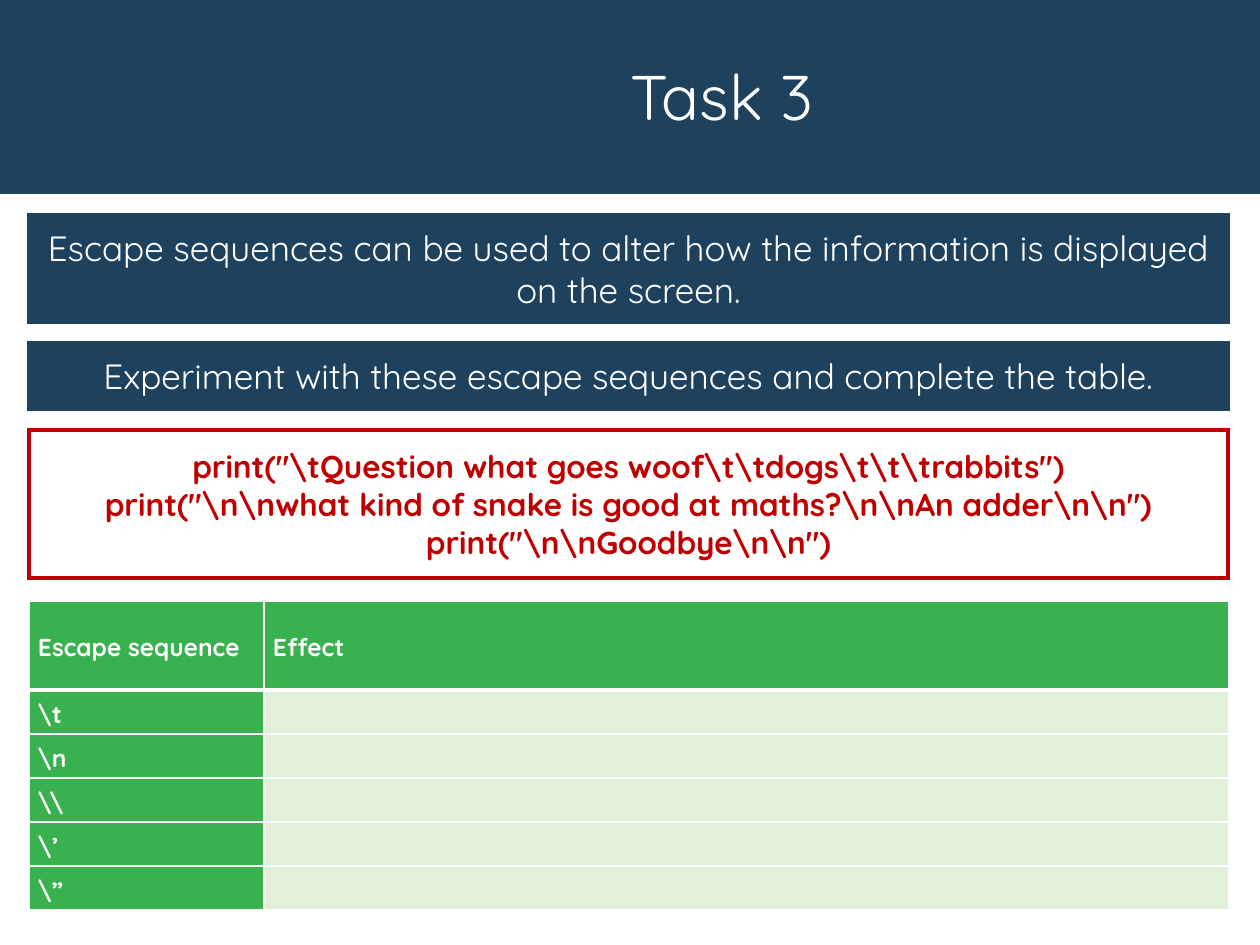
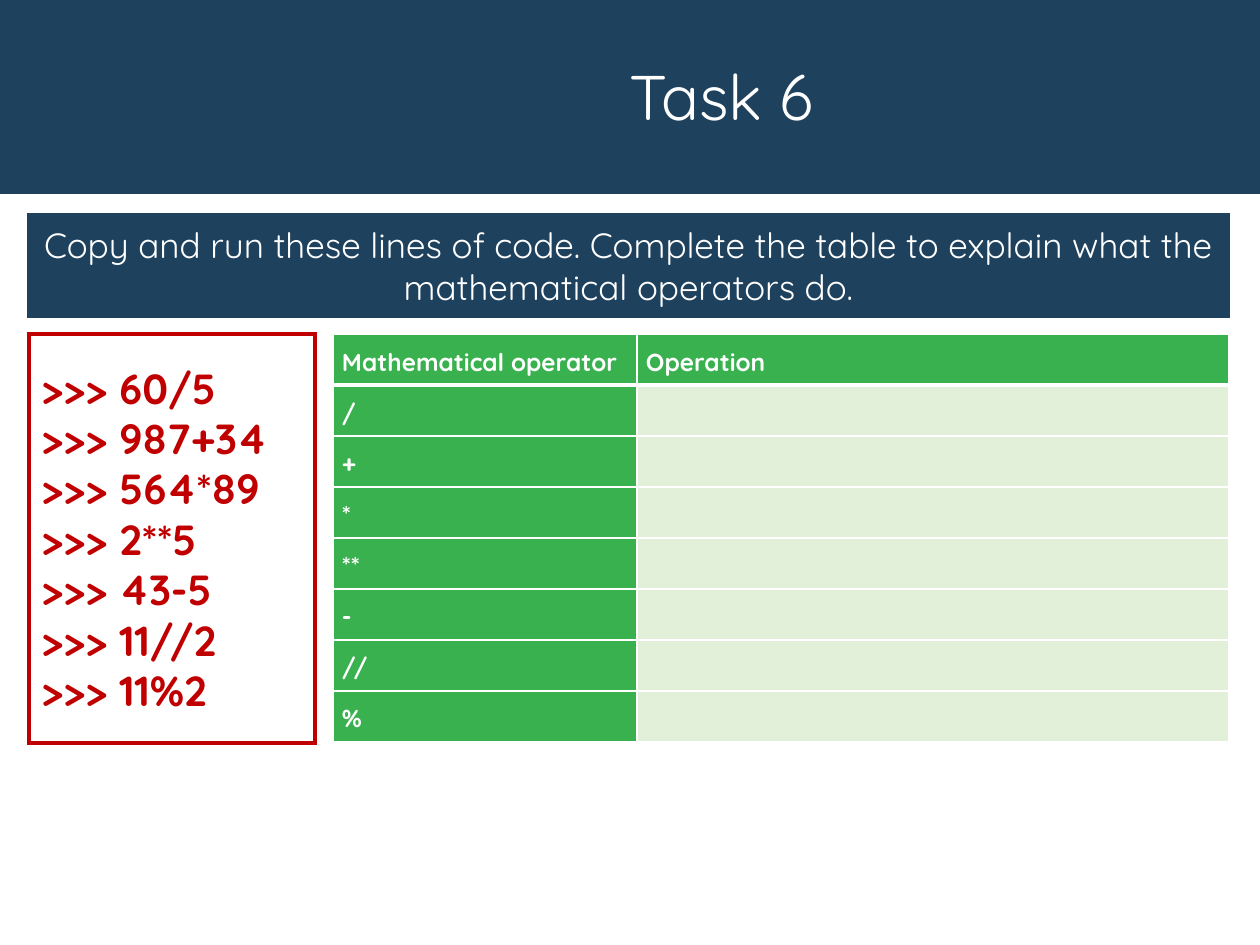
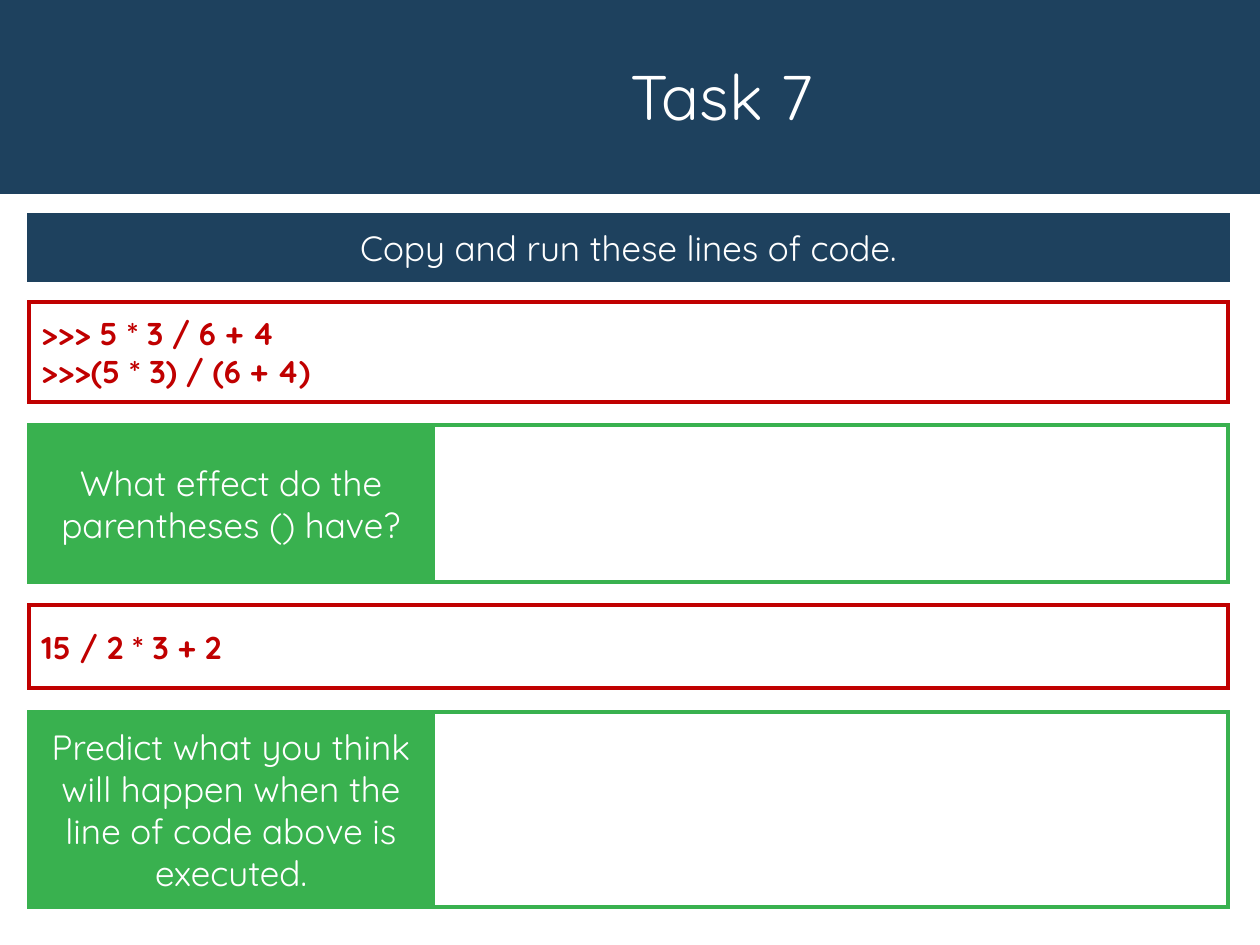
import pptx
import pptx.dml.color
import pptx.enum.shapes
import pptx.enum.text
import pptx.oxml
import pptx.oxml.ns
import pptx.util

EMU_PER_PX = 914400 / 126
FONT = "Quicksand"
NAVY, RED, GREEN, PALE_GREEN, WHITE = "1E415E", "C00000", "39B14F", "E2F0D9", "FFFFFF"
LEFT, WIDTH, TOP = 29, 1199, 215
LABEL_WIDTH = 404
CENTER = pptx.enum.text.PP_ALIGN.CENTER
ALIGN_LEFT = pptx.enum.text.PP_ALIGN.LEFT
MIDDLE = pptx.enum.text.MSO_ANCHOR.MIDDLE
NAMESPACE = pptx.oxml.ns.nsdecls("a")


def px(length):
    return pptx.util.Emu(round(length * EMU_PER_PX))


def rgb(color):
    return pptx.dml.color.RGBColor.from_string(color)


def write(frame, lines, size, color, bold=False, align=CENTER, spacing=None):
    """Fill a text frame, one paragraph a line, in a single style."""
    frame.text = "\n".join(lines)
    for para in frame.paragraphs:
        para.alignment = align
        if spacing:
            para.line_spacing = spacing
        for span in para.runs:
            span.font.name = FONT
            span.font.size = pptx.util.Pt(size)
            span.font.bold = bold
            span.font.color.rgb = rgb(color)


def add_box(page, left, top, width, height, fill=None, line=None):
    box = page.shapes.add_shape(pptx.enum.shapes.MSO_SHAPE.RECTANGLE,
                                px(left), px(top), px(width), px(height))
    box.shadow.inherit = False
    if fill:
        box.fill.solid()
        box.fill.fore_color.rgb = rgb(fill)
    else:
        box.fill.background()
    if line:
        box.line.color.rgb = rgb(line)
        box.line.width = pptx.util.Pt(2.25)
        # Square corners
        outline = box.element.spPr.find(pptx.oxml.ns.qn("a:ln"))
        outline.append(pptx.oxml.parse_xml(f'<a:miter {NAMESPACE} lim="800000"/>'))
    else:
        box.line.fill.background()
    box.text_frame.word_wrap = True
    box.text_frame.vertical_anchor = MIDDLE
    return box


def add_banner(page, text, top, height, color=NAVY, width=WIDTH):
    box = add_box(page, LEFT, top, width, height, color, color)
    write(box.text_frame, [text], 20, WHITE)


def add_code(page, lines, top, height, width=WIDTH, size=18, align=ALIGN_LEFT):
    box = add_box(page, LEFT, top, width, height, line=RED)
    write(box.text_frame, lines, size, RED, bold=True, align=align)


def add_question(page, text, top, height):
    """A green prompt with an empty answer box beside it."""
    add_box(page, LEFT + LABEL_WIDTH, top, WIDTH - LABEL_WIDTH, height, line=GREEN)
    add_banner(page, text, top, height, GREEN, LABEL_WIDTH)


def set_border(cell, side, points):
    cell._tc.get_or_add_tcPr().append(pptx.oxml.parse_xml(
        f'<a:ln{side} {NAMESPACE} w="{points * 12700}"><a:solidFill>'
        f'<a:srgbClr val="{WHITE}"/></a:solidFill></a:ln{side}>'))


def add_answer_table(page, headings, keys, left, top, column_widths, row_heights):
    """A heading row, then one key a row with an empty cell to fill in."""
    rows = [headings] + [(key, "") for key in keys]
    table = page.shapes.add_table(len(rows), 2, px(left), px(top),
                                  px(sum(column_widths)), px(sum(row_heights))).table
    table.horz_banding = False
    for column, width in zip(table.columns, column_widths):
        column.width = px(width)
    for row, height in zip(table.rows, row_heights):
        row.height = px(height)
    for i, texts in enumerate(rows):
        for j, text in enumerate(texts):
            cell = table.cell(i, j)
            cell.margin_left = cell.margin_right = px(9)
            cell.margin_top = cell.margin_bottom = 0
            cell.vertical_anchor = MIDDLE
            borders = {"L": 1, "R": 1, "T": 3 if i == 1 else 1, "B": 3 if i == 0 else 1}
            for side, points in borders.items():
                set_border(cell, side, points)
            cell.fill.solid()
            cell.fill.fore_color.rgb = rgb(GREEN if text else PALE_GREEN)
            if text:
                write(cell.text_frame, [text], 14, WHITE, True, ALIGN_LEFT, 1.15)


def add_page(deck, title):
    """A page with the title on a navy band."""
    page = deck.slides.add_slide(deck.slide_layouts[5])
    heading = page.shapes.title
    heading.left, heading.top, heading.width, heading.height = map(px, (183, 30, 1077, 140))
    heading.text_frame.vertical_anchor = MIDDLE
    write(heading.text_frame, [title], 36, WHITE, spacing=0.9)
    band = add_box(page, 0, 0, 1260, 194, NAVY)
    heading.element.addprevious(band.element)
    return page


def add_escape_page(deck):
    page = add_page(deck, "Task 3")
    add_banner(page, "Escape sequences can be used to alter how the information "
                     "is displayed on the screen.", TOP, 107)
    add_banner(page, "Experiment with these escape sequences and complete the table.", 343, 66)
    add_code(page, [r'print("\tQuestion what goes woof\t\tdogs\t\t\trabbits")',
                    r'print("\n\nwhat kind of snake is good at maths?\n\nAn adder\n\n")',
                    r'print("\n\nGoodbye\n\n")'], 430, 148, align=CENTER)
    add_answer_table(page, ("Escape sequence", "Effect"),
                     [r"\t", r"\n", r"\\", r"\’", r"\”"],
                     LEFT, 601, (235, 965), [89] + [44] * 5)


def add_operator_page(deck):
    page = add_page(deck, "Task 6")
    add_banner(page, "Copy and run these lines of code. Complete the table to explain "
                     "what the mathematical operators do.", TOP, 101)
    sums = ["60/5", "987+34", "564*89", "2**5", "43-5", "11//2", "11%2"]
    add_code(page, [f">>> {line}" for line in sums], 334, 409, width=286, size=24)
    add_answer_table(page, ("Mathematical operator", "Operation"),
                     ["/", "+", "*", "**", "-", "//", "%"],
                     333, 334, (304, 592), [51] * 8)


def add_parentheses_page(deck):
    page = add_page(deck, "Task 7")
    add_banner(page, "Copy and run these lines of code.", TOP, 65)
    add_code(page, [">>> 5 * 3 / 6 + 4", ">>>(5 * 3) / (6 + 4)"], 302, 100)
    add_question(page, "What effect do the parentheses () have?", 425, 157)
    add_code(page, ["15 / 2 * 3 + 2"], 605, 83)
    add_question(page, "Predict what you think will happen when the line of code "
                       "above is executed.", 712, 195)


def main():
    deck = pptx.Presentation()
    deck.slide_width, deck.slide_height = px(1260), px(945)
    add_escape_page(deck)
    add_operator_page(deck)
    add_parentheses_page(deck)
    deck.save("out.pptx")


if __name__ == "__main__":
    main()
